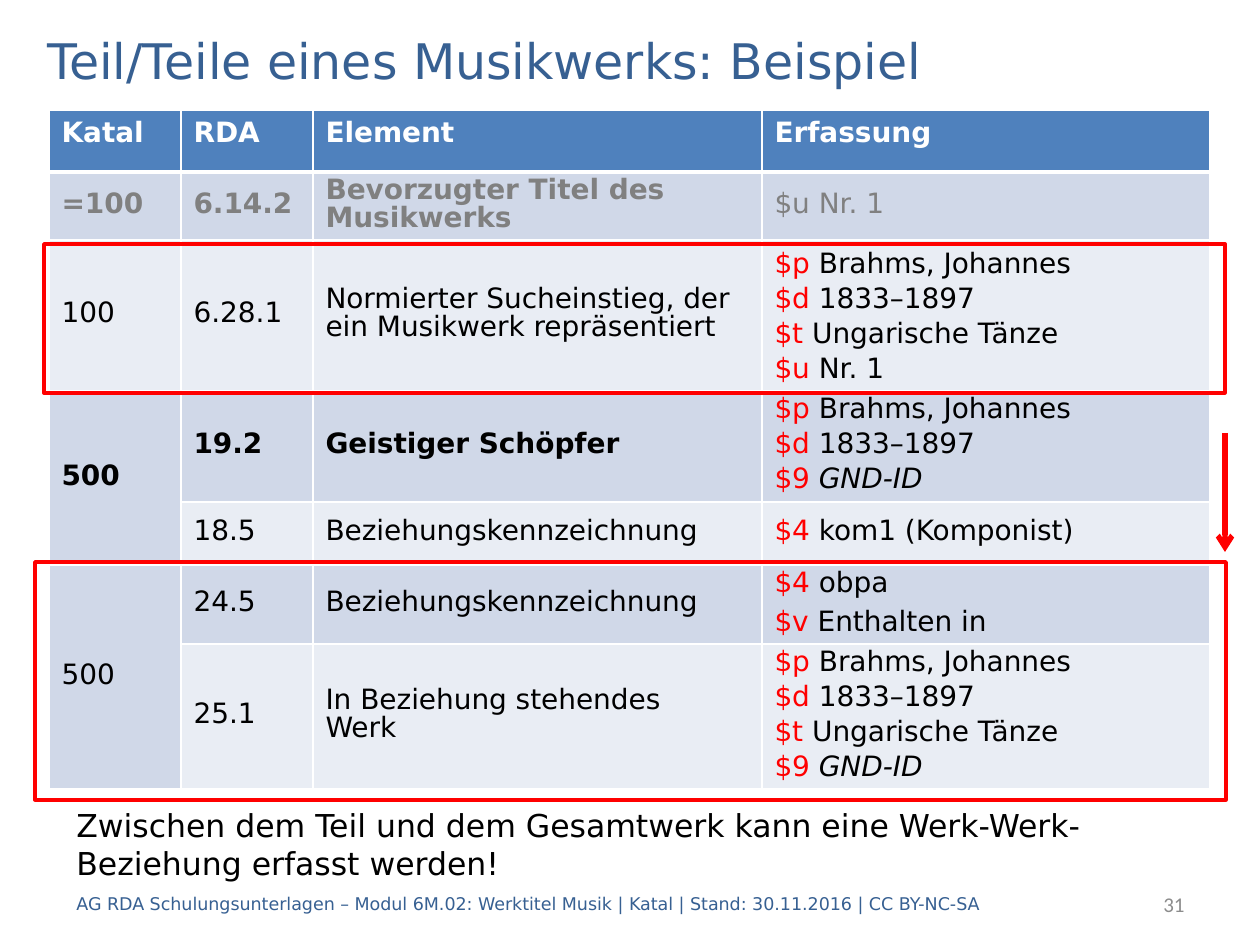
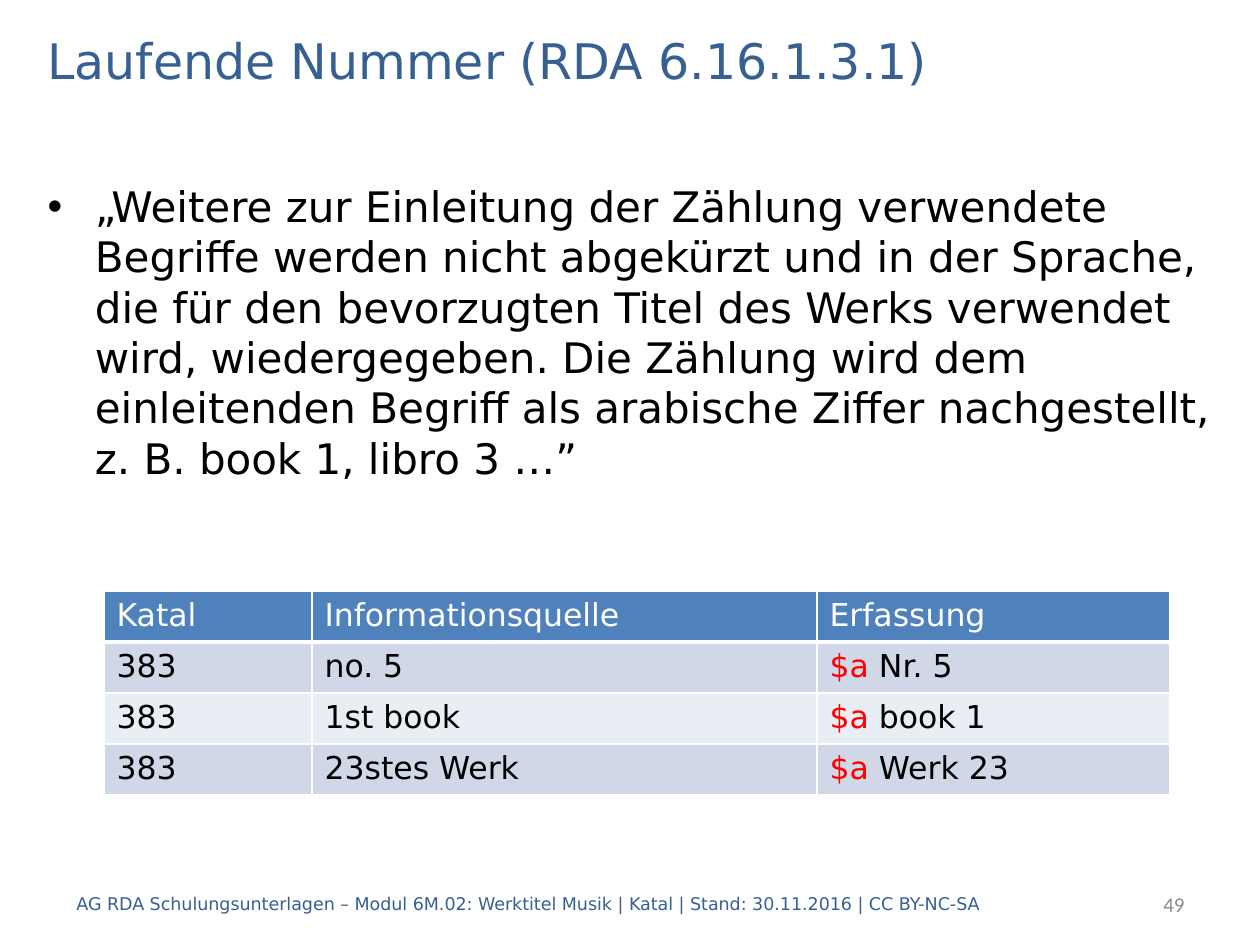
from lxml import etree
from pptx import Presentation
from pptx.dml.color import RGBColor
from pptx.enum.shapes import MSO_CONNECTOR, MSO_SHAPE
from pptx.enum.text import MSO_ANCHOR, MSO_AUTO_SIZE, PP_ALIGN
from pptx.oxml.ns import qn
from pptx.util import Pt

EMU = 914400 / 126  # one px
SANS = "DejaVu Sans"
LEFT, RIGHT = PP_ALIGN.LEFT, PP_ALIGN.RIGHT
TOP, MIDDLE = MSO_ANCHOR.TOP, MSO_ANCHOR.MIDDLE
RECT, STRAIGHT = MSO_SHAPE.RECTANGLE, MSO_CONNECTOR.STRAIGHT
FIXED = MSO_AUTO_SIZE.NONE
CONTENT, TITLED = 1, 5  # layouts

COLORS = {
    "title": "376092", "head": "4F81BD", "dark": "D0D8E8", "light": "E9EDF4",
    "text": "000000", "mute": "808080", "page": "8C8C8C", "red": "FF0000",
    "white": "FFFFFF",
}
TITLE_BOX = (35, 24, 1191, 71)
FOOT_BOX = (64, 879, 1052, 50)
PAGE_BOX = (997, 879, 200, 50)
SYSTEM = "Katal"
FOOTER = (f"AG RDA Schulungsunterlagen – Modul 6M.02: Werktitel Musik | {SYSTEM} | "
          "Stand: 30.11.2016 | CC BY-NC-SA")

NOTE = ("Zwischen dem Teil und dem Gesamtwerk kann eine "
        "Werk-Werk-Beziehung erfasst werden!")
PARTS = [
    (SYSTEM, "RDA", "Element", "Erfassung"),
    ("=100", "6.14.2", "Bevorzugter Titel des Musikwerks", "$u Nr. 1"),
    ("100", "6.28.1", "Normierter Sucheinstieg, der ein Musikwerk repräsentiert",
     "$p Brahms, Johannes\n$d 1833–1897\n$t Ungarische Tänze\n$u Nr. 1"),
    ("500", "19.2", "Geistiger Schöpfer",
     "$p Brahms, Johannes\n$d 1833–1897\n$9 GND-ID"),
    ("", "18.5", "Beziehungskennzeichnung", "$4 kom1 (Komponist)"),
    ("500", "24.5", "Beziehungskennzeichnung", "$4 obpa\n$v Enthalten in"),
    ("", "25.1", "In Beziehung stehendes Werk",
     "$p Brahms, Johannes\n$d 1833–1897\n$t Ungarische Tänze\n$9 GND-ID"),
]
QUOTE = ("„Weitere zur Einleitung der Zählung verwendete Begriffe werden nicht "
         "abgekürzt und in der Sprache, die für den bevorzugten Titel des Werks "
         "verwendet wird, wiedergegeben. Die Zählung wird dem einleitenden "
         "Begriff als arabische Ziffer nachgestellt, z. B. book 1, libro 3 …”")
NUMBERS = [
    (SYSTEM, "Informationsquelle", "Erfassung"),
    ("383", "no. 5", "$a Nr. 5"),
    ("383", "1st book", "$a book 1"),
    ("383", "23stes Werk", "$a Werk 23"),
]


def px(*sizes):
    return [round(size * EMU) for size in sizes]


def rgb(name):
    return RGBColor.from_string(COLORS[name])


def style(font, size, color, name=SANS):
    font.size, font.name, font.bold = Pt(size), name, False
    font.color.rgb = rgb(color)


def place(shape, box):
    shape.left, shape.top, shape.width, shape.height = px(*box)


def write(shape, text, size, color, anchor=MIDDLE, align=LEFT, name=SANS):
    frame = shape.text_frame
    frame.word_wrap, frame.auto_size = True, FIXED
    frame.vertical_anchor = anchor
    frame.text = text
    par = frame.paragraphs[0]
    par.alignment = align
    style(par.font, size, color, name)


# Shared slide frame: title, footer, page number
def start(deck, layout, title, page):
    slide = deck.slides.add_slide(deck.slide_layouts[layout])
    place(slide.shapes.title, TITLE_BOX)
    write(slide.shapes.title, title, 28, "title")
    write(slide.shapes.add_textbox(*px(*FOOT_BOX)), FOOTER, 10, "title")
    write(slide.shapes.add_textbox(*px(*PAGE_BOX)), page, 12, "page",
          align=RIGHT, name="Calibri")
    return slide


def edge(cell, head):
    """White cell borders, thicker below the header."""
    props = cell._tc.get_or_add_tcPr()
    for i, side in enumerate(("lnL", "lnR", "lnT", "lnB")):
        width = Pt(3) if head and side == "lnB" else Pt(1)
        line = etree.Element(qn("a:" + side), w=str(width))
        fill = etree.SubElement(line, qn("a:solidFill"))
        etree.SubElement(fill, qn("a:srgbClr"), val=COLORS["white"])
        props.insert(i, line)


def fill_par(par, text, size, color):
    """Write a line; its subfield code is red unless the row is muted."""
    style(par.font, size, color)
    if text.startswith("$") and color == "text":
        code = par.add_run()
        code.text, text = text[:3], text[3:]
        code.font.color.rgb = rgb("red")
    run = par.add_run()
    run.text = text
    if text == "GND-ID":
        run.font.italic = True


def grid(slide, spot, cols, rows, data, size):
    """Banded table; returns it for further layout."""
    box = (*spot, sum(cols), sum(rows))
    table = slide.shapes.add_table(len(rows), len(cols), *px(*box)).table
    for col, width in zip(table.columns, px(*cols)):
        col.width = width
    for row, height in zip(table.rows, px(*rows)):
        row.height = height
    for r, line in enumerate(data):
        band = "head" if r == 0 else "dark" if r % 2 else "light"
        ink = "white" if r == 0 else "mute" if line[0].startswith("=") else "text"
        for c, text in enumerate(line):
            cell = table.cell(r, c)
            cell.fill.solid()
            cell.fill.fore_color.rgb = rgb(band)
            edge(cell, r == 0)
            frame = cell.text_frame
            for i, part in enumerate(text.split("\n")):
                par = frame.add_paragraph() if i else frame.paragraphs[0]
                fill_par(par, part, size, ink)
    return table


def tighten(table):
    """Exact line heights and bold rows of the example table."""
    last = len(table.columns) - 1
    for r, row in enumerate(table.rows):
        for c, cell in enumerate(row.cells):
            bold = r == 0 or r in (1, 3) and c < last
            loose = r == 5 and c == last
            lead = 19.2 if r == 2 and c == last else 16
            if r:
                cell.vertical_anchor = MIDDLE
                cell.margin_top = cell.margin_bottom = 0
            if c == 2:
                cell.margin_right = px(24)[0]
            for i, par in enumerate(cell.text_frame.paragraphs):
                par.font.bold = bold
                if r:
                    par.line_spacing = Pt(8 if i and not loose else lead)
                    par.space_before = Pt(6)
                    par.space_after = Pt(0 if loose else 6)
    for r in (3, 5):
        table.cell(r, 0).merge(table.cell(r + 1, 0))


def frame_box(slide, box):
    shape = slide.shapes.add_shape(RECT, *px(*box))
    shape.shadow.inherit = False
    shape.fill.background()
    shape.line.color.rgb = rgb("red")
    shape.line.width = Pt(2)


def arrow(slide, x, top, low):
    link = slide.shapes.add_connector(STRAIGHT, *px(x, top, x, low))
    link.line.color.rgb = rgb("red")
    link.line.width = Pt(3)
    etree.SubElement(link.line._get_or_add_ln(), qn("a:tailEnd"), type="arrow")
    etree.SubElement(link._element.spPr, qn("a:effectLst"))


def note(slide, box):
    shape = slide.shapes.add_textbox(*px(*box))
    shape.fill.solid()
    shape.fill.fore_color.rgb = rgb("white")
    write(shape, NOTE, 18, "text", TOP)


# Slide with the worked example
def example(deck):
    slide = start(deck, TITLED, "Teil/Teile eines Musikwerks: Beispiel", "31")
    table = grid(slide, (49, 110), (132, 132, 449, 448),
                 (62, 68, 151, 111, 63, 79, 145), PARTS, 16)
    tighten(table)
    frame_box(slide, (44, 244, 1181, 149))
    arrow(slide, 1225, 433, 552)
    note(slide, (64, 800, 1142, 89))
    frame_box(slide, (35, 562, 1191, 238))


# Slide with the quoted rule and its table
def number(deck):
    slide = start(deck, CONTENT, "Laufende Nummer (RDA 6.16.1.3.1)", "49")
    body = slide.placeholders[1]
    place(body, (35, 174, 1191, 380))
    write(body, QUOTE, 24, "text", TOP)
    body.text_frame.paragraphs[0].space_before = Pt(0)
    grid(slide, (104, 591), (208, 505, 353), (51,) * 4, NUMBERS, 18)


def main():
    deck = Presentation()
    deck.slide_width, deck.slide_height = px(1260, 945)
    example(deck)
    number(deck)
    deck.save("out.pptx")


if __name__ == "__main__":
    main()
